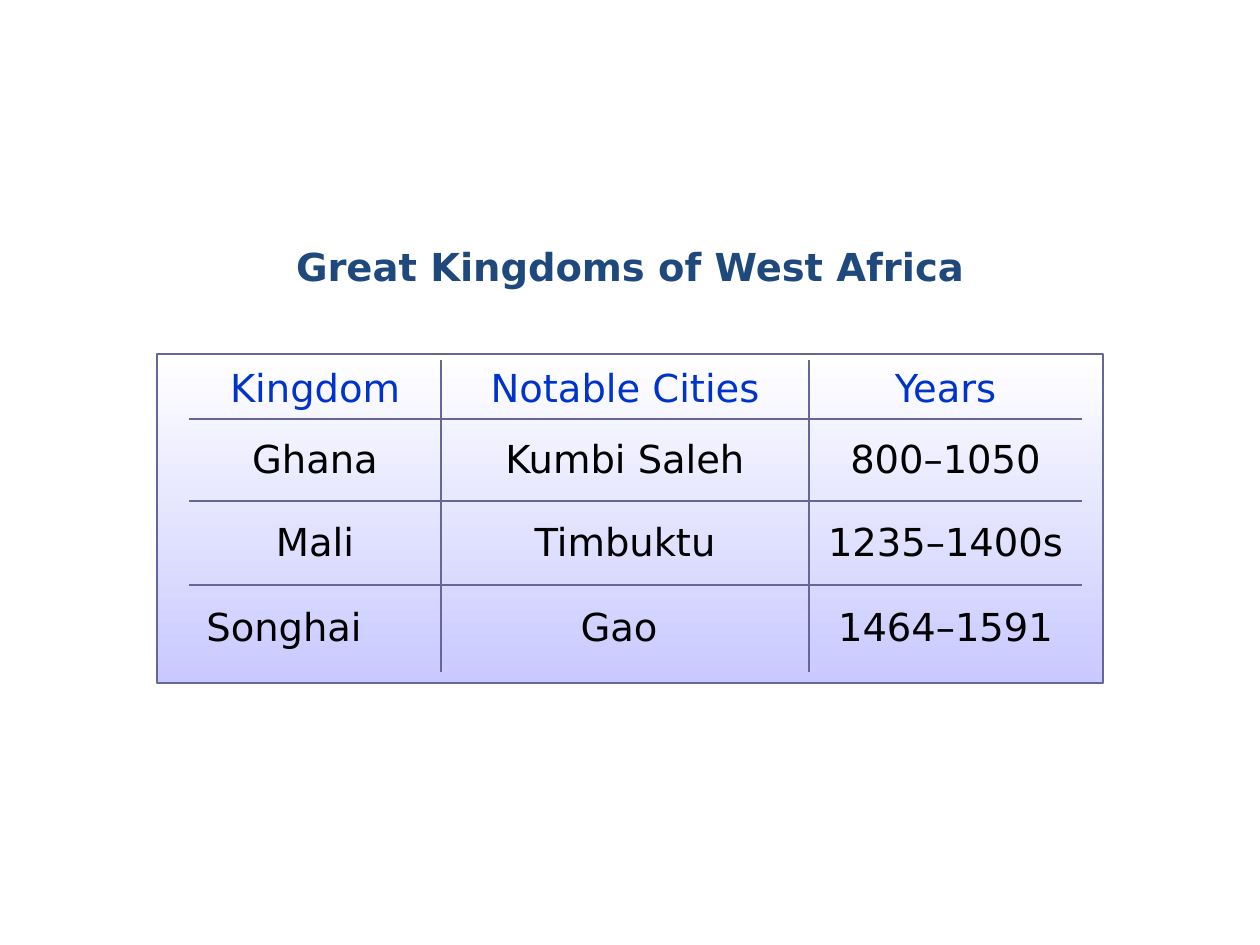
from lxml.etree import SubElement
from pptx import Presentation
from pptx.dml.color import RGBColor
from pptx.enum.shapes import MSO_SHAPE as Shape
from pptx.enum.text import MSO_ANCHOR as Anchor, PP_ALIGN as Align
from pptx.oxml.ns import qn
from pptx.util import Pt

TITLE = "Great Kingdoms of West Africa"
KINGDOMS = [
    ("Kingdom", "Notable Cities", "Years"),
    ("Ghana", "Kumbi Saleh", "800–1050"),
    ("Mali", "Timbuktu", "1235–1400s"),
    ("Songhai", "Gao", "1464–1591"),
]
COLORS = {"title": "1F497D", "heading": "0033CC", "body": "000000",
          "line": "666699", "top": "FFFFFF", "bottom": "C9C9FF"}
FONT = {"name": "DejaVu Sans", "size": Pt(22), "bold": False}

PX = 914400 / 126
SLIDE = (1260, 945)
TITLE_BOX = (63, 234, 1134, 84)
PANEL_BOX = (157, 354, 946, 329)
GRID_AT = (189, 360)
COLUMNS = (252, 368, 273)
ROWS = (59, 82, 84, 87)
INSET = 13
SHIFT_LEFT = {"Songhai": 31, "Gao": 6}


def px(*lengths):
    return [round(length * PX) for length in lengths]


def rgb(name):
    return RGBColor.from_string(COLORS[name])


def apply(target, values):
    for key, value in values.items():
        setattr(target, key, value)


def write(frame, text, color, **changes):
    paragraph = frame.paragraphs[0]
    paragraph.alignment = Align.CENTER
    run = paragraph.add_run()
    run.text = text
    apply(run.font, FONT | changes)
    run.font.color.rgb = rgb(color)
    return paragraph


def add_border(cell, side, visible):
    border = SubElement(cell._tc.get_or_add_tcPr(), qn(f"a:ln{side}"), w=str(Pt(1)))
    if visible:
        fill = SubElement(border, qn("a:solidFill"))
        SubElement(fill, qn("a:srgbClr"), val=COLORS["line"])
    else:
        SubElement(border, qn("a:noFill"))


def add_panel(slide):
    panel = slide.shapes.add_shape(Shape.RECTANGLE, *px(*PANEL_BOX))
    panel.shadow.inherit = False
    panel.fill.gradient()
    panel.fill.gradient_angle = 270
    for stop, name, position in zip(panel.fill.gradient_stops, ("top", "bottom"), (0, 1)):
        stop.color.rgb = rgb(name)
        stop.position = position
    panel.line.color.rgb = rgb("line")
    panel.line.width = Pt(1.5)


def add_kingdoms(slide):
    table = slide.shapes.add_table(
        len(ROWS), len(COLUMNS), *px(*GRID_AT, sum(COLUMNS), sum(ROWS))).table
    apply(table, {"first_row": False, "horz_banding": False})
    for column, width in zip(table.columns, px(*COLUMNS)):
        column.width = width
    for row, height in zip(table.rows, px(*ROWS)):
        row.height = height
    for r, texts in enumerate(KINGDOMS):
        for c, text in enumerate(texts):
            cell = table.cell(r, c)
            left, right = px(INSET, INSET + 2 * SHIFT_LEFT.get(text, 0))
            apply(cell, {"vertical_anchor": Anchor.MIDDLE,
                         "margin_left": left, "margin_right": right})
            inner = {"L": c > 0, "R": c < len(COLUMNS) - 1,
                     "T": r > 0, "B": r < len(ROWS) - 1}
            for side, visible in inner.items():
                add_border(cell, side, visible)
            cell.fill.background()
            write(cell.text_frame, text, "body" if r else "heading")


def add_title(slide):
    frame = slide.shapes.add_textbox(*px(*TITLE_BOX)).text_frame
    apply(frame, {"word_wrap": True, "margin_top": px(9)[0]})
    write(frame, TITLE, "title", bold=True).space_after = Pt(15.9)


def main():
    deck = Presentation()
    deck.slide_width, deck.slide_height = px(*SLIDE)
    slide = deck.slides.add_slide(deck.slide_layouts[6])
    add_panel(slide)
    add_kingdoms(slide)
    add_title(slide)
    deck.save("out.pptx")


if __name__ == "__main__":
    main()
